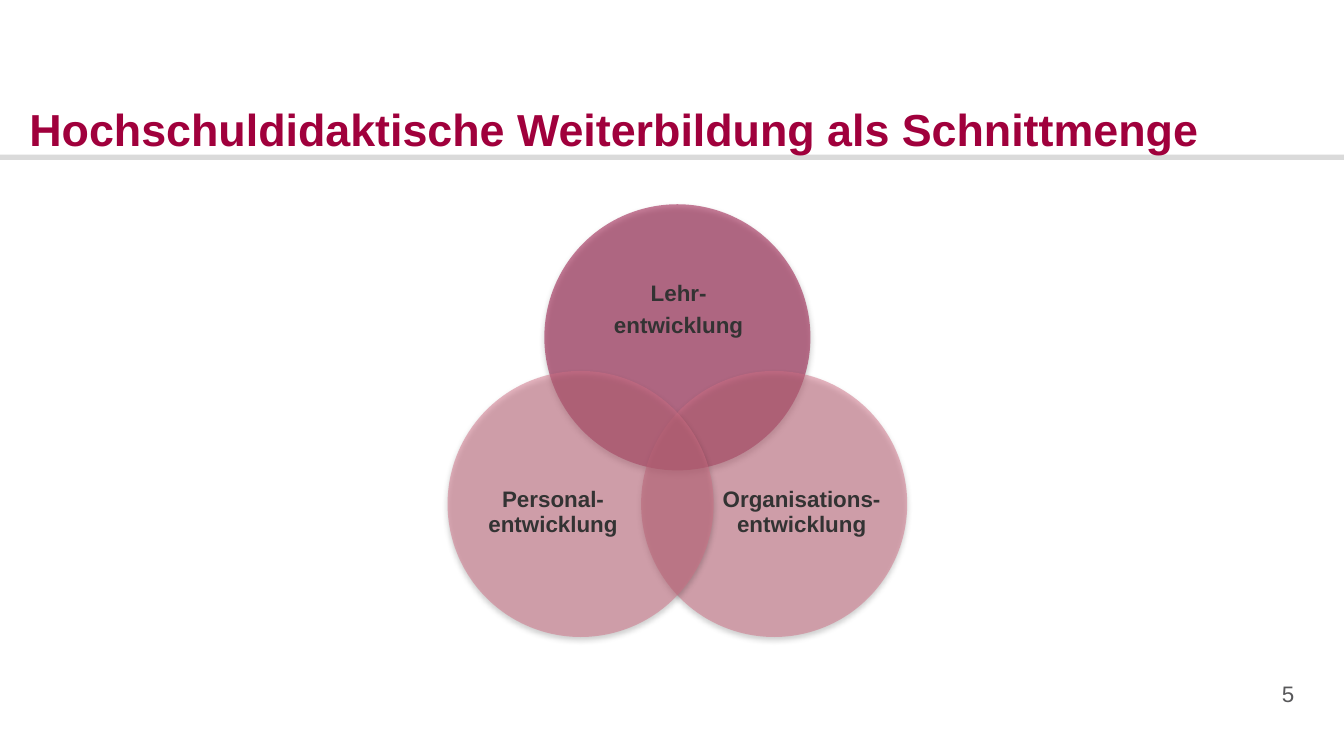
"""Build a slide with three overlapping circles on teaching development."""
from lxml import etree
from pptx import Presentation
from pptx import util as u
from pptx.dml.color import RGBColor
from pptx.enum import shapes, text
from pptx.oxml.ns import qn

WINE = RGBColor(0xA0, 0x00, 0x3C)
PLUM = RGBColor(0x91, 0x00, 0x36)
ROSE = RGBColor(0xCF, 0x6E, 0x84)
INK = RGBColor(0x33, 0x33, 0x33)
GREY = RGBColor(0x58, 0x58, 0x5A)
PALE = RGBColor(0xDA, 0xDA, 0xDA)
SIZE = 1.98


class Deck:
    """Holds the font and the current slide and draws each kind of element."""

    def __init__(self, slide, font="Arial"):
        self.slide = slide
        self.font = font

    def shape(self, kind, box, fill):
        """Add a filled shape with no outline or shadow."""
        shape = self.slide.shapes.add_shape(kind, *map(u.Inches, box))
        shape.fill.solid()
        shape.fill.fore_color.rgb = fill
        shape.line.fill.background()
        shape.shadow.inherit = False
        return shape

    def circle(self, left, top, fill):
        """Add a half-transparent circle with a soft shadow below."""
        shape = self.shape(shapes.MSO_SHAPE.OVAL, (left, top, SIZE, SIZE), fill)
        props = shape._element.spPr
        color = props.find(qn("a:solidFill")).find(qn("a:srgbClr"))
        etree.SubElement(color, qn("a:alpha"), val="50000")
        shadow = etree.SubElement(
            props.find(qn("a:effectLst")), qn("a:outerShdw"),
            blurRad=str(u.Pt(3.1)), dist=str(u.Pt(1.6)), dir="5400000", rotWithShape="0")
        black = etree.SubElement(shadow, qn("a:srgbClr"), val="000000")
        etree.SubElement(black, qn("a:alpha"), val="38000")

    def label(self, box, lines, size, color, align, bold=True, side=0, space=1, after=0):
        """Add a vertically centred text box with one paragraph per line."""
        frame = self.slide.shapes.add_textbox(*map(u.Inches, box)).text_frame
        frame.word_wrap = True
        frame.vertical_anchor = text.MSO_ANCHOR.MIDDLE
        frame.margin_left = frame.margin_right = u.Inches(side)
        frame.margin_top = frame.margin_bottom = 0
        frame.text = "\n".join(lines)
        for para in frame.paragraphs:
            para.alignment = align
            para.line_spacing = space
            para.space_after = u.Pt(after)
            para.font.name = self.font
            para.font.size = u.Pt(size)
            para.font.bold = bold
            para.font.color.rgb = color


def main():
    """Draw the slide and save it."""
    show = Presentation()
    show.slide_width = u.Inches(10)
    show.slide_height = show.slide_width * 9 // 16
    deck = Deck(show.slides.add_slide(show.slide_layouts[6]))
    align = text.PP_ALIGN

    deck.shape(shapes.MSO_SHAPE.RECTANGLE, (0, 1.15, 10, 0.04), PALE)
    deck.label((0.12, 0.66, 9.12, 0.59),
               ["Hochschuldidaktische Weiterbildung als Schnittmenge"],
               24, WINE, align.LEFT, side=0.1)
    deck.label((9.02, 5.01, 0.61, 0.3), ["5"], 12, GREY, align.RIGHT, bold=False)

    circles = [
        (4.05, 1.52, PLUM, (4.32, 1.86, 1.46, 0.89), ["Lehr-", "entwicklung"]),
        (4.77, 2.76, ROSE, (5.37, 3.27, 1.19, 1.09), ["Organisations-entwicklung"]),
        (3.33, 2.76, ROSE, (3.52, 3.27, 1.19, 1.09), ["Personal-entwicklung"]),
    ]
    for left, top, fill, box, lines in circles:
        deck.circle(left, top, fill)
        deck.label(box, lines, 12, INK, align.CENTER, space=0.9, after=4.2)

    show.save("out.pptx")


if __name__ == "__main__":
    main()
